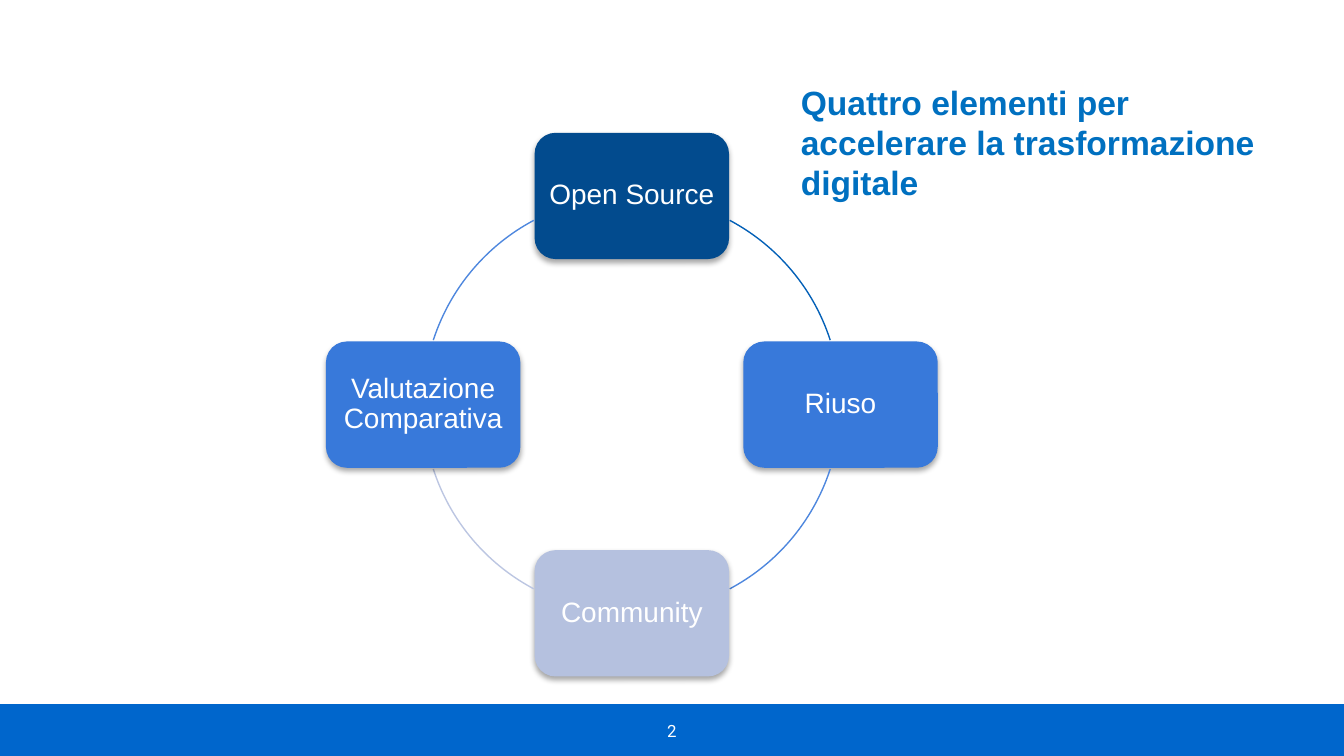
from math import cos, radians, sin
from lxml.etree import SubElement
from pptx import Presentation
from pptx.dml.color import RGBColor
from pptx.enum.shapes import MSO_SHAPE
from pptx.enum.text import MSO_ANCHOR, PP_ALIGN
from pptx.oxml.ns import qn
from pptx.util import Pt

WHITE = "FFFFFF"
STEPS = [
    ("Open Source", "024B8E", "0360B7", 298),
    ("Riuso", "3879DA", "4E87DE", 18),
    ("Community", "B5C1DF", "BCC6E2", 118),
    ("Valutazione Comparativa", "3879DA", "4E87DE", 198),
]


def tint(text):
    return RGBColor.from_string(text)


def add_form(slide, kind, box, fill=None):
    form = slide.shapes.add_shape(kind, *map(Pt, box))
    form.shadow.inherit = False
    form.line.fill.background()
    if fill:
        form.fill.solid()
        form.fill.fore_color.rgb = tint(fill)
    else:
        form.fill.background()
    return form


def write(form, text, size, face, color, align, inset, bold=False):
    frame = form.text_frame
    frame.word_wrap = True
    frame.margin_left = frame.margin_right = Pt(inset[0])
    frame.margin_top = frame.margin_bottom = Pt(inset[1])
    frame.text = text
    line = frame.paragraphs[0]
    line.alignment = align
    font = line.runs[0].font
    font.size, font.name, font.bold = Pt(size), face, bold
    font.color.rgb = tint(color)
    return frame


def add_shade(form):
    effects = form._element.spPr.find(qn("a:effectLst"))
    shade = SubElement(effects, qn("a:outerShdw"), blurRad=str(Pt(3.1)),
                       dist=str(Pt(1.8)), dir="5400000", rotWithShape="0")
    color = SubElement(shade, qn("a:srgbClr"), val="000000")
    SubElement(color, qn("a:alpha"), val="35000")


def add_card(slide, box, text, fill):
    card = add_form(slide, MSO_SHAPE.ROUNDED_RECTANGLE, box, fill)
    add_shade(card)
    frame = write(card, text, 15, "Arial", WHITE, PP_ALIGN.CENTER, (2, 4))
    frame.vertical_anchor = MSO_ANCHOR.MIDDLE
    frame.paragraphs[0].line_spacing = 0.9


def add_arc(slide, box, start, color):
    arc = add_form(slide, MSO_SHAPE.ARC, box)
    for spot, angle in enumerate((start, start + 44)):
        arc.adjustments[spot] = angle * 0.6
    arc.line.color.rgb = tint(color)
    arc.line.width = Pt(0.75)


def add_cycle(slide, box, wide=104.2, high=67.7):
    left, top, width, height = box
    radius = width / 2
    for spot, (text, fill, line, start) in enumerate(STEPS):
        angle = radians(90 * spot - 90)
        x = left + radius * (1 + cos(angle))
        y = top + radius * (1 + sin(angle))
        add_card(slide, (x - wide / 2, y - high / 2, wide, high), text, fill)
        add_arc(slide, box, start, line)


def add_title(slide, box):
    title = slide.shapes.add_textbox(*map(Pt, box))
    write(title, "Quattro elementi per accelerare la trasformazione digitale",
          18, "Arial", "0070C0", PP_ALIGN.LEFT, (7.2, 3.6), True)


def add_foot(slide, box):
    left, top, width, height = box
    add_form(slide, MSO_SHAPE.RECTANGLE, box, "0066CC")
    page = slide.shapes.add_textbox(
        Pt(left + width / 2 - 25.6), Pt(top + 7.4), Pt(51.2), Pt(13.7))
    write(page, "2", 9, "Roboto", WHITE, PP_ALIGN.CENTER, (1.4, 1.4))


def main():
    deck = Presentation()
    deck.slide_width, deck.slide_height = Pt(720), Pt(405)
    slide = deck.slides.add_slide(deck.slide_layouts[6])
    add_foot(slide, (0, 377.2, 720, 27.8))
    add_cycle(slide, (226.7, 105, 223.6, 223.6))
    add_title(slide, (421.9, 40.2, 267.8, 72.7))
    deck.save("out.pptx")


if __name__ == "__main__":
    main()
